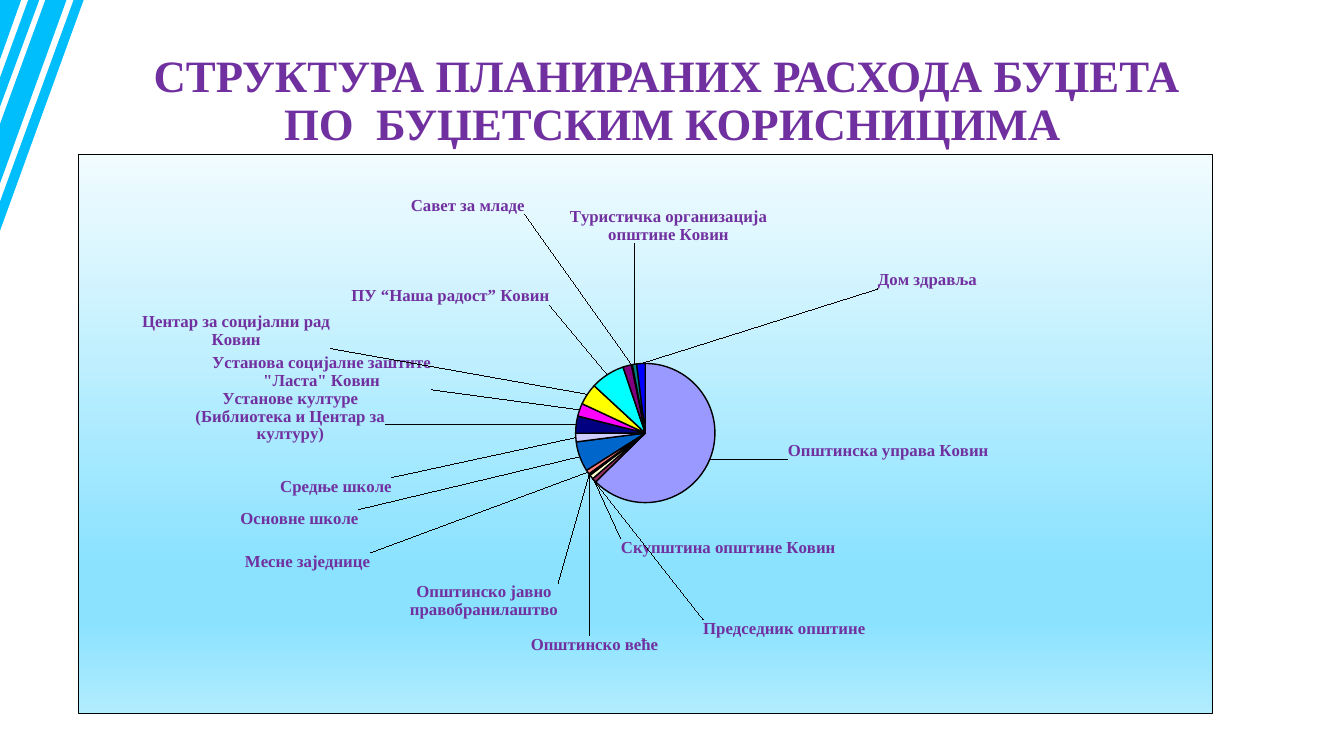
import copy
import math

import pptx
import pptx.chart.data
import pptx.dml.color
import pptx.enum.chart
import pptx.enum.text
import pptx.oxml
import pptx.oxml.ns
import pptx.util

Inches = pptx.util.Inches
Pt = pptx.util.Pt
RGBColor = pptx.dml.color.RGBColor

PURPLE = RGBColor(0x70, 0x30, 0xA0)
SKY = RGBColor(0x00, 0xBD, 0xFB)
BLACK = RGBColor(0, 0, 0)
SLICE_COLORS = [RGBColor.from_string(code) for code in (
    "9999FF 993366 FFFFCC CCFFFF 660066 FF8080 0066CC CCCCFF "
    "000080 FF00FF FFFF00 00FFFF 800080 800000 008080 0000FF").split()]
BACKDROP_STOPS = [(0, RGBColor(0xF2, 0xFC, 0xFF)), (11, RGBColor(0xE3, 0xF8, 0xFF)),
                  (74, RGBColor(0x8A, 0xE2, 0xFF)), (83, RGBColor(0x8A, 0xE2, 0xFF)),
                  (100, RGBColor(0xB1, 0xEC, 0xFF))]

TITLE_LINES = ["СТРУКТУРА ПЛАНИРАНИХ РАСХОДА БУЏЕТА ", "ПО  БУЏЕТСКИМ КОРИСНИЦИМА"]
STRIPES = [
    [(0.73, 0), (0.83, 0), (0, 2.29), (0, 2)],
    [(0.39, 0), (0, 1.06), (0, 0.77), (0.28, 0)],
    [(0.66, 0), (0, 1.82), (0, 1.23), (0.45, 0)],
    [(0, 0), (0.21, 0), (0, 0.59)],
]
# A share that rounds to zero still needs a sliver to carry its label
SLIVER = 0.2
# Name, share, label (centre x, centre y, width, line count)
SPENDERS = [
    ("Општинска управа Ковин", 63, (8.81, 4.47, 1.99, 1)),
    ("Скупштина општине Ковин", 1, (7.23, 5.43, 2.12, 1)),
    ("Председник општине", 1, (7.78, 6.23, 1.61, 1)),
    ("Општинско веће", SLIVER, (5.9, 6.39, 1.26, 1)),
    ("Општинско јавно правобранилаштво", SLIVER, (4.8, 5.96, 1.47, 2)),
    ("Месне заједнице", 1, (3.05, 5.57, 1.24, 1)),
    ("Основне школе", 7, (2.97, 5.14, 1.17, 1)),
    ("Средње школе", 2, (3.33, 4.82, 1.11, 1)),
    ("Установе културе (Библиотека и Центар за културу)", 4, (2.88, 4.12, 1.88, 3)),
    ('Установа социјалне заштите "Ласта" Ковин', 3, (3.19, 3.68, 2.17, 2)),
    ("Центар за социјални рад Ковин", 5, (2.34, 3.27, 1.87, 2)),
    ("ПУ “Наша радост” Ковин", 8, (4.47, 2.93, 1.96, 1)),
    ("", 2, None),
    ("Савет за младе", SLIVER, (4.64, 2.03, 1.13, 1)),
    ("Туристичка организација општине Ковин", 1, (6.63, 2.23, 1.96, 2)),
    ("Дом здравља", 2, (9.2, 2.77, 0.98, 1)),
]
CHART_BOX = (0.77, 1.53, 11.25, 5.55)
PLOT_BOX = {"x": 0.403, "y": 0.374, "w": 0.195, "h": 0.249}
PIE_CENTRE = (6.4, 4.29)
LABEL_RADIUS = 0.75
LABEL_LINE = 0.18


def chart_xml(markup):
    namespaces = pptx.oxml.ns.nsdecls("c", "a")
    return pptx.oxml.parse_xml(markup.replace(">", f" {namespaces}>", 1))


def label_shift(share_middle, label):
    """Offset of a label from its automatic place, as fractions of the chart."""
    centre_x, centre_y, width, lines = label
    angle = math.tau * share_middle
    shift = []
    for axis, (direction, middle, size) in enumerate((
            (math.sin(angle), centre_x, width),
            (-math.cos(angle), centre_y, lines * LABEL_LINE))):
        side = 0 if abs(direction) < 0.087 else math.copysign(1, direction)
        automatic = PIE_CENTRE[axis] + LABEL_RADIUS * direction + side * size / 2
        shift.append((middle - automatic) / CHART_BOX[axis + 2])
    return shift


class SlideBuilder:
    title_font = {"name": "Times New Roman", "size": Pt(32), "bold": True}
    label_font = {"name": "Times New Roman", "size": Pt(12), "bold": True}
    chart_font = {"name": "Arial", "size": Pt(7)}

    def __init__(self, page):
        self.page = page

    def style(self, font, values, color):
        for name, value in values.items():
            setattr(font, name, value)
        font.color.rgb = color

    def stripes(self, outlines):
        builder = None
        for outline in outlines:
            start, *rest = [(Inches(x), Inches(y)) for x, y in outline]
            if builder is None:
                builder = self.page.shapes.build_freeform(*start)
            else:
                builder.move_to(*start)
            builder.add_line_segments(rest)
        shape = builder.convert_to_shape()
        shape.shadow.inherit = False
        shape.fill.solid()
        shape.fill.fore_color.rgb = SKY
        shape.line.fill.background()

    def title(self, lines, place):
        frame = self.page.shapes.add_textbox(*map(Inches, place)).text_frame
        frame.word_wrap = True
        frame.vertical_anchor = pptx.enum.text.MSO_ANCHOR.MIDDLE
        para = frame.paragraphs[0]
        para.text = "\v".join(lines)
        para.alignment = pptx.enum.text.PP_ALIGN.CENTER
        para.line_spacing = 0.9
        for span in para.runs:
            self.style(span.font, self.title_font, PURPLE)

    def pie(self, spenders, place):
        data = pptx.chart.data.CategoryChartData(number_format="#,##0")
        data.categories = [name for name, _, _ in spenders]
        data.add_series("Series 1", [share for _, share, _ in spenders])
        chart = self.page.shapes.add_chart(
            pptx.enum.chart.XL_CHART_TYPE.PIE, *map(Inches, place), data).chart
        chart.has_title = chart.has_legend = False
        self.style(chart.font, self.chart_font, BLACK)
        plot = chart.plots[0]
        plot.vary_by_categories = True
        series = plot.series[0]
        for index, color in enumerate(SLICE_COLORS):
            piece = series.points[index].format
            piece.fill.solid()
            piece.fill.fore_color.rgb = color
            piece.line.color.rgb = BLACK
            piece.line.width = Pt(1)
        self.plot_layout(chart)
        self.backdrop(chart)
        self.pie_labels(series, spenders)

    def plot_layout(self, chart):
        area = chart.element.find(".//" + pptx.oxml.ns.qn("c:plotArea"))
        for layout in area.findall(pptx.oxml.ns.qn("c:layout")):
            area.remove(layout)
        sizes = "".join(f'<c:{key} val="{value}"/>' for key, value in PLOT_BOX.items())
        area.insert(0, chart_xml(
            '<c:layout><c:manualLayout><c:layoutTarget val="inner"/>'
            f'<c:xMode val="edge"/><c:yMode val="edge"/>{sizes}</c:manualLayout></c:layout>'))

    def backdrop(self, chart):
        stops = "".join(f'<a:gs pos="{at * 1000}"><a:srgbClr val="{color}"/></a:gs>'
                        for at, color in BACKDROP_STOPS)
        chart.element.find(pptx.oxml.ns.qn("c:chart")).addnext(chart_xml(
            f'<c:spPr><a:gradFill><a:gsLst>{stops}</a:gsLst><a:lin ang="5400000" scaled="0"/>'
            f'</a:gradFill><a:ln w="{Pt(0.25)}"><a:solidFill><a:srgbClr val="{BLACK}"/>'
            '</a:solidFill></a:ln></c:spPr>'))

    def pie_labels(self, series, spenders):
        labels = series.data_labels
        labels.show_category_name = True
        labels.show_value = False
        self.style(labels.font, self.label_font, PURPLE)
        text_style = labels._element.find(pptx.oxml.ns.qn("c:txPr"))
        flags = "".join(f'<c:show{part} val="{int(part == "CatName")}"/>' for part in (
            "LegendKey", "Val", "CatName", "SerName", "Percent", "BubbleSize"))
        total = sum(share for _, share, _ in spenders)
        passed = 0
        for index, (_, share, label) in enumerate(spenders):
            middle = (passed + share / 2) / total
            passed += share
            if label is None:
                entry = chart_xml(f'<c:dLbl><c:idx val="{index}"/><c:delete val="1"/></c:dLbl>')
            else:
                x, y = label_shift(middle, label)
                entry = chart_xml(
                    f'<c:dLbl><c:idx val="{index}"/><c:layout><c:manualLayout>'
                    f'<c:x val="{x:.4f}"/><c:y val="{y:.4f}"/></c:manualLayout></c:layout>'
                    f'<c:dLblPos val="bestFit"/>{flags}</c:dLbl>')
                entry.insert(2, copy.deepcopy(text_style))
            labels._element.insert(index, entry)


def main():
    deck = pptx.Presentation()
    deck.slide_width, deck.slide_height = Inches(13.33), Inches(7.5)
    builder = SlideBuilder(deck.slides.add_slide(deck.slide_layouts[6]))
    builder.stripes(STRIPES)
    builder.title(TITLE_LINES, (0.34, 0.48, 12.66, 1.06))
    builder.pie(SPENDERS, CHART_BOX)
    deck.save("out.pptx")


if __name__ == "__main__":
    main()
